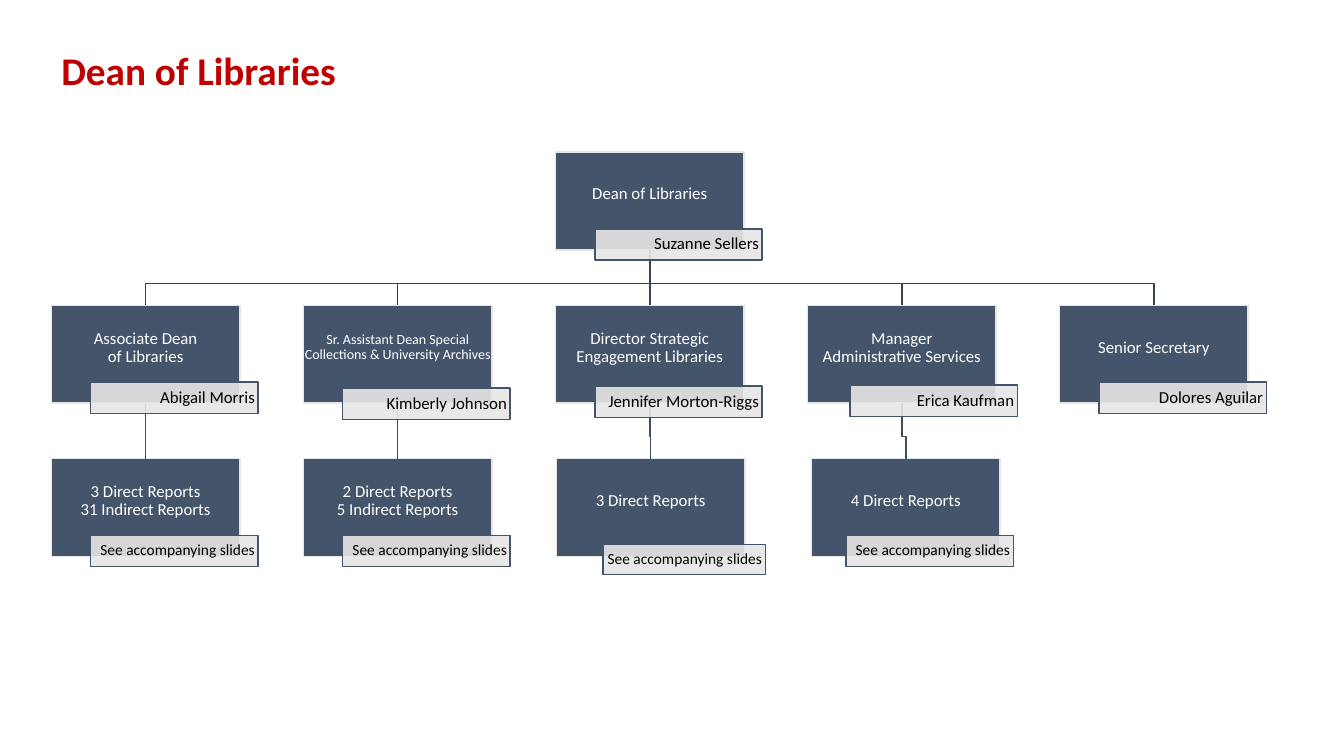
import pptx
import pptx.util
import pptx.dml.color
import pptx.enum.shapes
import pptx.enum.text
import pptx.oxml.ns
from lxml import etree
from pptx.util import Inches

# Content
TITLE = "Dean of Libraries"
SEE_SLIDES = "See accompanying slides"
# Each post: column, row, role, role style, name, name style, and
# (box shift, tag shift right, tag shift down, tag width, tag height)
USUAL = (0, 0.39, 0.76, 1.66, 0.31)
DEAN = (2, 0, "Dean of Libraries", "role", "Suzanne Sellers", "name", USUAL)
MANAGERS = [
    (0, 1, "Associate Dean\vof Libraries", "role", "Abigail Morris", "name", USUAL),
    (1, 1, "Sr. Assistant Dean Special Collections & University Archives",
     "small_role", "Kimberly Johnson", "name", (0, 0.39, 0.82, 1.66, 0.31)),
    (2, 1, "Director Strategic Engagement Libraries", "role",
     "Jennifer Morton-Riggs", "name", (0, 0.39, 0.8, 1.66, 0.31)),
    (3, 1, "Manager\vAdministrative Services", "role", "Erica Kaufman", "name",
     (0, 0.42, 0.79, 1.66, 0.31)),
    (4, 1, "Senior Secretary", "role", "Dolores Aguilar", "name", USUAL),
]
REPORTS = [
    (0, 2, "3 Direct Reports\v31 Indirect Reports", "role", SEE_SLIDES, "note", USUAL),
    (1, 2, "2 Direct Reports\v5 Indirect Reports", "role", SEE_SLIDES, "note", USUAL),
    (2, 2, "3 Direct Reports", "role", SEE_SLIDES, "note",
     (0.01, 0.46, 0.85, 1.61, 0.3)),
    (3, 2, "4 Direct Reports", "role", SEE_SLIDES, "note",
     (0.04, 0.34, 0.76, 1.66, 0.31)),
]

# Theme and grid
THEME = {
    "font": "Calibri",
    "title": {"size": 28, "color": "C00000", "bold": True},
    "role": {"size": 12, "color": "FFFFFF"},
    "small_role": {"size": 10, "color": "FFFFFF"},
    "name": {"size": 12, "color": "000000"},
    "note": {"size": 11, "color": "000000"},
    "box": "44546A", "tag": "E7E6E6", "tag_opacity": 90,
    "upper_line": "364355", "lower_line": "3E4C60", "line_width": 1,
}
LEFT, TOP, COLUMN_STEP, ROW_STEP = 0.51, 1.51, 2.5, 1.52
BOX_W, BOX_H, BEND_DROP = 1.87, 0.97, 0.33
ALIGN = pptx.enum.text.PP_ALIGN
MIDDLE = pptx.enum.text.MSO_ANCHOR.MIDDLE
BOX_FORMAT = {"word_wrap": True, "vertical_anchor": MIDDLE,
              "margin_left": Inches(0.01), "margin_right": Inches(0.01),
              "margin_top": Inches(0.01), "margin_bottom": Inches(0.14)}
TAG_FORMAT = {**BOX_FORMAT, "margin_left": Inches(0.03),
              "margin_right": Inches(0.03), "margin_bottom": Inches(0.01)}
TITLE_FORMAT = {"word_wrap": True,
                "auto_size": pptx.enum.text.MSO_AUTO_SIZE.SHAPE_TO_FIT_TEXT}


def rgb(code):
    return pptx.dml.color.RGBColor.from_string(code)


def write(frame, text, style, frame_format, align, spacing):
    for attribute, value in frame_format.items():
        setattr(frame, attribute, value)
    frame.text = text
    paragraph = frame.paragraphs[0]
    paragraph.alignment, paragraph.line_spacing = align, spacing
    look = THEME[style]
    for run in paragraph.runs:
        font_format = {"name": THEME["font"], "size": pptx.util.Pt(look["size"]),
                       "bold": look.get("bold", False)}
        for attribute, value in font_format.items():
            setattr(run.font, attribute, value)
        run.font.color.rgb = rgb(look["color"])


def set_line(line, color):
    line.color.rgb = rgb(THEME[color])
    line.width = pptx.util.Pt(THEME["line_width"])


def corner(post):
    column, row, shift = post[0], post[1], post[-1][0]
    return LEFT + column * COLUMN_STEP + shift, TOP + row * ROW_STEP


def add_rect(slide, left, top, width, height, fill, line):
    rect = slide.shapes.add_shape(pptx.enum.shapes.MSO_SHAPE.RECTANGLE,
                                  *map(Inches, (left, top, width, height)))
    rect.shadow.inherit = False
    rect.fill.solid()
    rect.fill.fore_color.rgb = rgb(THEME[fill])
    set_line(rect.line, line)
    return rect


def add_box(slide, post):
    box = add_rect(slide, *corner(post), BOX_W, BOX_H, "box", "tag")
    write(box.text_frame, post[2], post[3], BOX_FORMAT, ALIGN.CENTER, 0.9)
    return box


def add_tag(slide, post):
    left, top = corner(post)
    _, right, down, width, height = post[-1]
    tag = add_rect(slide, left + right, top + down, width, height, "tag", "box")
    color = tag.fill._xPr.find(".//" + pptx.oxml.ns.qn("a:srgbClr"))
    etree.SubElement(color, pptx.oxml.ns.qn("a:alpha"),
                     val=str(THEME["tag_opacity"] * 1000))
    write(tag.text_frame, post[4], post[5], TAG_FORMAT, ALIGN.RIGHT, 0.9)


def add_link(slide, parent, child, color):
    start_x, start_y = parent.left + parent.width // 2, parent.top + parent.height
    end_x, end_y = child.left + child.width // 2, child.top
    if start_x == end_x:
        link = slide.shapes.add_connector(pptx.enum.shapes.MSO_CONNECTOR.STRAIGHT,
                                          start_x, start_y, end_x, end_y)
        link.begin_connect(parent, 2)
        link.end_connect(child, 0)
        etree.SubElement(link._element.spPr, pptx.oxml.ns.qn("a:effectLst"))
    else:
        bend_y = start_y + Inches(BEND_DROP)
        outline = slide.shapes.build_freeform(start_x, start_y)
        outline.add_line_segments([(start_x, bend_y), (end_x, bend_y),
                                   (end_x, end_y)], close=False)
        link = outline.convert_to_shape()
        link.fill.background()
        link.shadow.inherit = False
    set_line(link.line, color)


def main():
    deck = pptx.Presentation()
    deck.slide_width, deck.slide_height = Inches(13.33), Inches(7.5)
    slide = deck.slides.add_slide(deck.slide_layouts[6])

    # Title
    heading = slide.shapes.add_textbox(*map(Inches, (0.51, 0.41, 3.08, 0.57)))
    write(heading.text_frame, TITLE, "title", TITLE_FORMAT, ALIGN.LEFT, 1.0)

    # Boxes, then the lines between them, then the tags on top
    dean_box = add_box(slide, DEAN)
    manager_boxes = [add_box(slide, post) for post in MANAGERS]
    report_boxes = [add_box(slide, post) for post in REPORTS]
    for manager_box in manager_boxes:
        add_link(slide, dean_box, manager_box, "upper_line")
    for manager_box, report_box in zip(manager_boxes, report_boxes):
        add_link(slide, manager_box, report_box, "lower_line")
    for post in [DEAN, *MANAGERS, *REPORTS]:
        add_tag(slide, post)

    deck.save("out.pptx")


if __name__ == "__main__":
    main()
